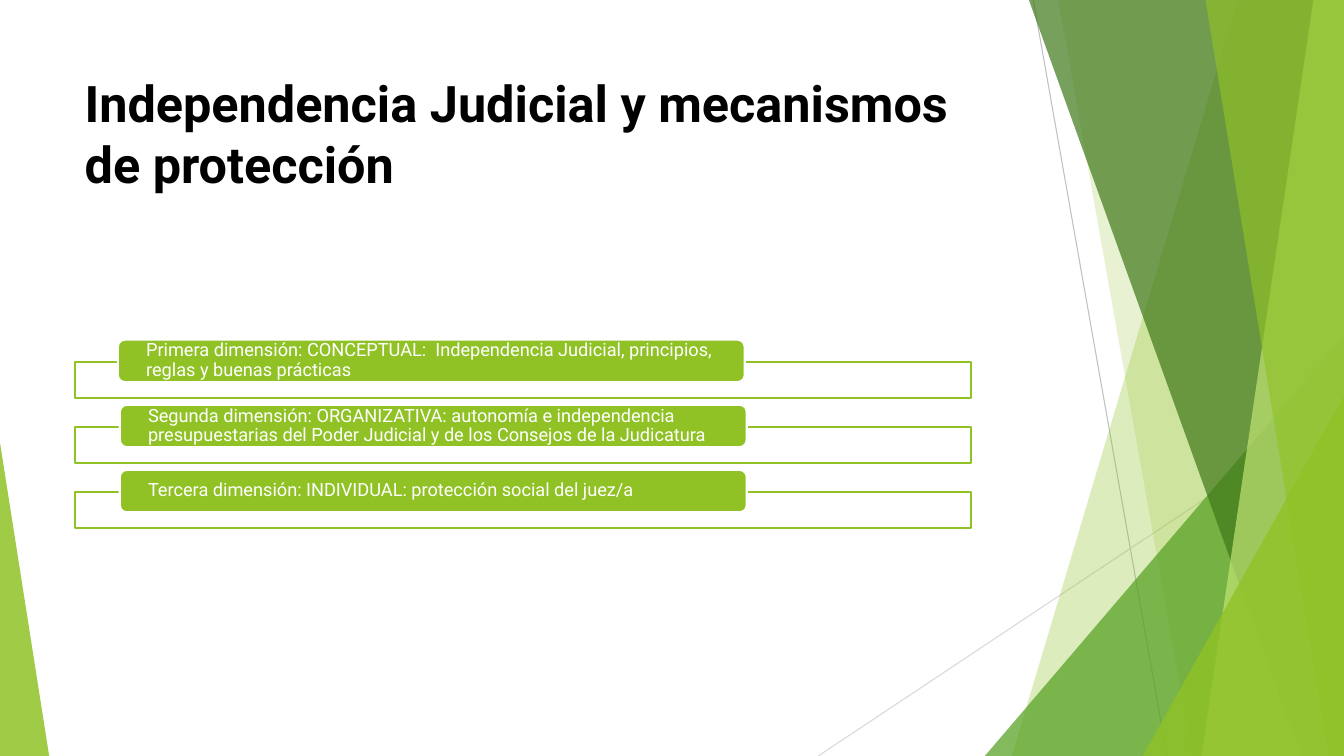
import pptx
import pptx.dml.color
import pptx.enum.shapes
import pptx.enum.text
import pptx.oxml.ns
import pptx.util
from lxml import etree
from pptx.util import Cm, Pt

WIDTH, HEIGHT = 33.87, 19.05
GREEN, WHITE = "90C226", "FFFFFF"
SHAPES = pptx.enum.shapes.MSO_SHAPE
ANCHORS = pptx.enum.text.MSO_ANCHOR

TITLE = "Independencia Judicial y mecanismos de protección"
# text, left edge of the label
DIMENSIONS = [
    ("Primera dimensión: CONCEPTUAL:  Independencia Judicial, principios, "
     "reglas y buenas prácticas", 2.97),
    ("Segunda dimensión: ORGANIZATIVA: autonomía e independencia "
     "presupuestarias del Poder Judicial y de los Consejos de la Judicatura", 3.02),
    ("Tercera dimensión: INDIVIDUAL: protección social del juez/a", 3.02),
]
ROW_PITCH = 1.64


def color(hex_string):
    return pptx.dml.color.RGBColor.from_string(hex_string)


class SlideBuilder:
    font = "Roboto"

    def __init__(self, slide):
        self.slide = slide
        self.shapes = slide.shapes

    def paint(self, shape, fill, opacity=100, line=None):
        """Set fill, opacity in percent and outline, without shadow."""
        shape.shadow.inherit = False
        shape.fill.solid()
        shape.fill.fore_color.rgb = color(fill)
        if opacity < 100:
            solid_fill = shape._element.spPr.find(pptx.oxml.ns.qn("a:solidFill"))
            alpha = etree.SubElement(solid_fill[0], pptx.oxml.ns.qn("a:alpha"))
            alpha.set("val", str(opacity * 1000))
        if line:
            shape.line.color.rgb = color(line)
            shape.line.width = Pt(1.5)
        else:
            shape.line.fill.background()

    def set_text(self, shape, text, size, text_color, bold=False):
        frame = shape.text_frame
        frame.word_wrap = True
        frame.text = text
        paragraph = frame.paragraphs[0]
        paragraph.alignment = pptx.enum.text.PP_ALIGN.LEFT
        font = paragraph.runs[0].font
        font.name, font.size, font.bold = self.font, Pt(size), bold
        font.color.rgb = color(text_color)
        return frame

    def title(self, text, left, top, width, height):
        shape = self.shapes.title
        shape.left, shape.top = Cm(left), Cm(top)
        shape.width, shape.height = Cm(width), Cm(height)
        frame = self.set_text(shape, text, 36, "000000", bold=True)
        frame.auto_size = pptx.enum.text.MSO_AUTO_SIZE.NONE
        frame.vertical_anchor = ANCHORS.TOP

    def line(self, start, end, line_color):
        connector = self.shapes.add_connector(
            pptx.enum.shapes.MSO_CONNECTOR.STRAIGHT, *map(Cm, start + end))
        connector.line.color.rgb = color(line_color)
        connector.line.width = Pt(0.75)
        properties = connector._element.spPr
        etree.SubElement(properties, pptx.oxml.ns.qn("a:effectLst"))

    def band(self, top_x, bottom_x, fill, opacity):
        """Full-height band from a slanted left side to the slide's right edge."""
        points = [(WIDTH, 0), (WIDTH, HEIGHT), (bottom_x, HEIGHT)]
        builder = self.shapes.build_freeform(Cm(top_x), 0)
        builder.add_line_segments([(Cm(x), Cm(y)) for x, y in points], close=True)
        self.paint(builder.convert_to_shape(), fill, opacity)

    def box(self, kind, left, top, width, height, fill, opacity=100, line=None):
        shape = self.shapes.add_shape(kind, Cm(left), Cm(top), Cm(width), Cm(height))
        self.paint(shape, fill, opacity, line)
        return shape

    def triangle(self, left, top, width, apex, fill, opacity):
        """Triangle standing on the slide's bottom edge."""
        shape = self.box(SHAPES.ISOSCELES_TRIANGLE, left, top, width,
                         HEIGHT - top, fill, opacity)
        shape.adjustments[0] = apex

    def dimension(self, text, label_left, offset):
        self.box(SHAPES.RECTANGLE, 1.9, 9.12 + offset, 22.58, 0.91, WHITE, 90, GREEN)
        label = self.box(SHAPES.ROUNDED_RECTANGLE, label_left, 8.56 + offset,
                         15.8, 1.07, GREEN, line=WHITE)
        frame = self.set_text(label, text, 13, WHITE)
        frame.margin_left = frame.margin_right = Cm(0.66)
        frame.margin_top = frame.margin_bottom = 0
        frame.vertical_anchor = ANCHORS.MIDDLE
        frame.paragraphs[0].line_spacing = 0.9


def main():
    presentation = pptx.Presentation()
    presentation.slide_width, presentation.slide_height = Cm(WIDTH), Cm(HEIGHT)
    layout = presentation.slide_layouts.get_by_name("Title Only")
    builder = SlideBuilder(presentation.slides.add_slide(layout))

    builder.line((26.04, 0), (29.41, HEIGHT), "BFBFBF")
    builder.line((WIDTH, 10.24), (20.62, HEIGHT), "D9D9D9")
    builder.band(31.19, 25.5, GREEN, 30)
    builder.band(26.67, 30.05, GREEN, 20)
    builder.triangle(24.82, 8.46, WIDTH - 24.82, 1, "54A021", 72)
    builder.band(25.93, 32.79, "3F7819", 70)
    builder.band(33.1, 30.28, "C0E474", 70)
    builder.band(30.38, 33.48, GREEN, 65)
    builder.triangle(28.8, 9.98, WIDTH - 28.8, 1, GREEN, 80)
    builder.triangle(0, 11.15, 1.24, 0, GREEN, 85)

    builder.title(TITLE, 1.88, 1.7, 23.88, 3.66)
    for row, (text, label_left) in enumerate(DIMENSIONS):
        builder.dimension(text, label_left, row * ROW_PITCH)
    presentation.save("out.pptx")


if __name__ == "__main__":
    main()
